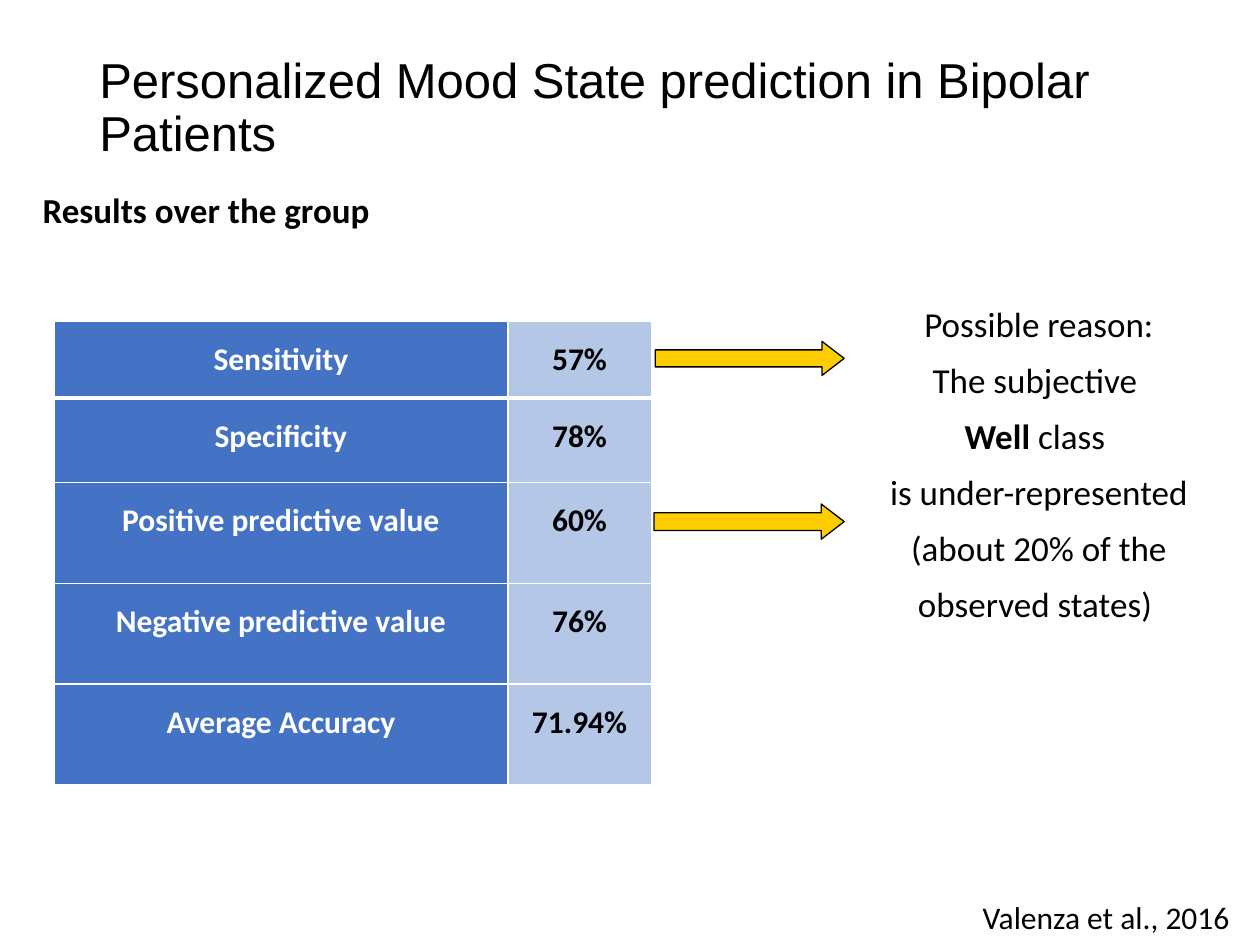
import pptx
import pptx.dml.color
import pptx.enum.shapes
import pptx.enum.text
import pptx.oxml
import pptx.oxml.ns
import pptx.util
from collections import namedtuple

RGBColor = pptx.dml.color.RGBColor
BLACK = RGBColor(0x00, 0x00, 0x00)
WHITE = RGBColor(0xFF, 0xFF, 0xFF)
BLUE = RGBColor(0x44, 0x72, 0xC4)
PALE_BLUE = RGBColor(0xB4, 0xC7, 0xE7)
YELLOW = RGBColor(0xFF, 0xCC, 0x00)

GRID_COLUMNS, GRID_ROWS = 100, 75
UNIT = pptx.util.Inches(0.1)
CENTER = pptx.enum.text.PP_ALIGN.CENTER
LEFT = pptx.enum.text.PP_ALIGN.LEFT

Box = namedtuple("Box", "column row columns rows")

RESULTS = [
    ("Sensitivity", "57%"),
    ("Specificity", "78%"),
    ("Positive predictive value", "60%"),
    ("Negative predictive value", "76%"),
    ("Average Accuracy", "71.94%"),
]
COLUMN_WIDTHS = [36, 11.4]
ROW_HEIGHTS = [6.1, 6.7, 8, 8, 8]
REASON = [
    "Possible reason:",
    "The subjective ",
    "Well| class ",
    "is under-represented",
    "(about 20% of the",
    "observed states) ",
]


def grid(length):
    return int(length * UNIT)


def place(box):
    return [grid(length) for length in box]


def format_span(span, size, color=BLACK, bold=False, font="Calibri"):
    span.font.name = font
    span.font.size = pptx.util.Pt(size)
    span.font.color.rgb = color
    span.font.bold = bold


def add_text(page, box, lines, size, align=LEFT, bold=False, font="Calibri",
             after=0, spacing=None, wrap=False):
    frame = page.shapes.add_textbox(*place(box)).text_frame
    frame.word_wrap = wrap
    frame.text = "\n".join(line.replace("|", "") for line in lines)
    for para, line in zip(frame.paragraphs, lines):
        para.alignment = align
        para.space_after = pptx.util.Pt(after)
        para.line_spacing = spacing
        strong, mark, rest = line.partition("|")
        if mark:
            para.runs[0].text = strong
            para.add_run().text = rest
        for index, span in enumerate(para.runs):
            format_span(span, size, bold=bold or (bool(mark) and index == 0), font=font)


def set_borders(cell, bottom):
    properties = cell._tc.get_or_add_tcPr()
    widths = {"lnL": 1, "lnR": 1, "lnT": 1, "lnB": bottom}
    for position, (side, width) in enumerate(widths.items()):
        line = pptx.oxml.parse_xml(
            f'<a:{side} {pptx.oxml.ns.nsdecls("a")} w="{pptx.util.Pt(width)}">'
            f'<a:solidFill><a:srgbClr val="{WHITE}"/></a:solidFill></a:{side}>'
        )
        properties.insert(position, line)


def fill_cell(cell, text, fill, color, bottom):
    cell.margin_left = cell.margin_right = grid(0.7)
    cell.margin_top = cell.margin_bottom = 0
    cell.fill.solid()
    cell.fill.fore_color.rgb = fill
    cell.text_frame.text = text
    para = cell.text_frame.paragraphs[0]
    para.alignment = CENTER
    para.line_spacing = 1.5
    format_span(para.runs[0], 18, color, bold=True)
    set_borders(cell, bottom)


def add_results(page, box):
    table = page.shapes.add_table(len(RESULTS), 2, *place(box)).table
    table.first_row = table.horz_banding = False
    for column, width in zip(table.columns, COLUMN_WIDTHS):
        column.width = grid(box.columns * width / sum(COLUMN_WIDTHS))
    for index, (row, height) in enumerate(zip(table.rows, ROW_HEIGHTS)):
        row.height = grid(box.rows * height / sum(ROW_HEIGHTS))
        label, value = RESULTS[index]
        bottom = 3 if index == 0 else 1
        fill_cell(row.cells[0], label, BLUE, WHITE, bottom)
        fill_cell(row.cells[1], value, PALE_BLUE, BLACK, bottom)


def add_arrow(page, box):
    arrow = page.shapes.add_shape(
        pptx.enum.shapes.MSO_SHAPE.RIGHT_ARROW, *place(box))
    arrow.adjustments[1] = 0.65
    arrow.shadow.inherit = False
    arrow.fill.solid()
    arrow.fill.fore_color.rgb = YELLOW
    arrow.line.color.rgb = BLACK
    arrow.line.width = pptx.util.Pt(0.75)


def main():
    deck = pptx.Presentation()
    deck.slide_width = grid(GRID_COLUMNS)
    deck.slide_height = grid(GRID_ROWS)
    page = deck.slides.add_slide(deck.slide_layouts[6])
    add_text(page, Box(6.9, 4, 86.2, 14.5),
             ["Personalized Mood State prediction in Bipolar Patients"],
             28, font="Arial", spacing=0.9, wrap=True)
    add_text(page, Box(2.4, 14.5, 34.3, 4.4), ["Results over the group"],
             20, bold=True, after=8)
    add_results(page, Box(4.3, 25.5, sum(COLUMN_WIDTHS), sum(ROW_HEIGHTS)))
    add_arrow(page, Box(52, 27.1, 15, 2.7))
    add_arrow(page, Box(51.9, 40, 15.1, 2.8))
    add_text(page, Box(68.5, 23.5, 27.9, 27.9), REASON, 20, align=CENTER, after=8)
    add_text(page, Box(77, 70.8, 21.9, 4), ["Valenza et al., 2016"], 18)
    deck.save("out.pptx")


if __name__ == "__main__":
    main()
